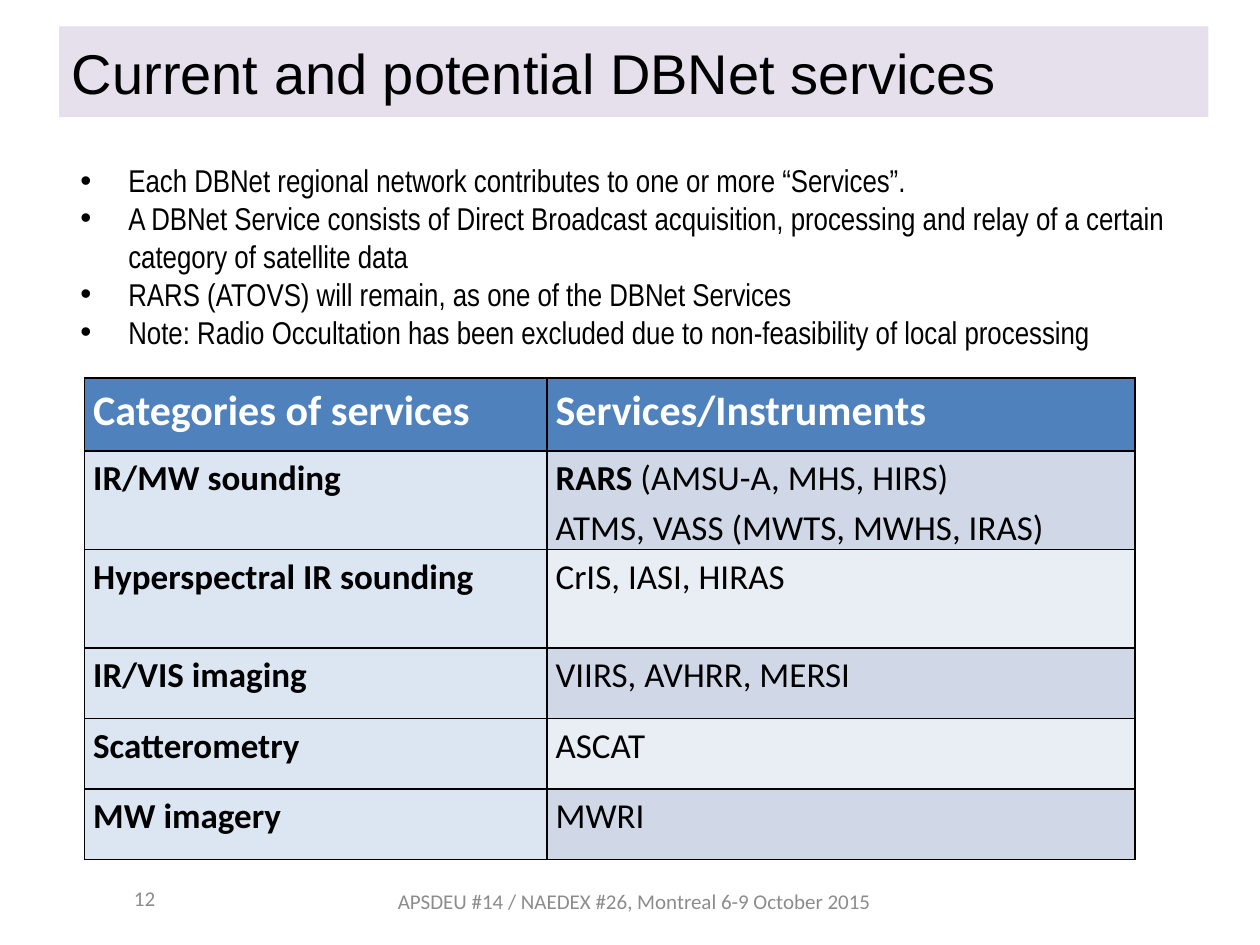
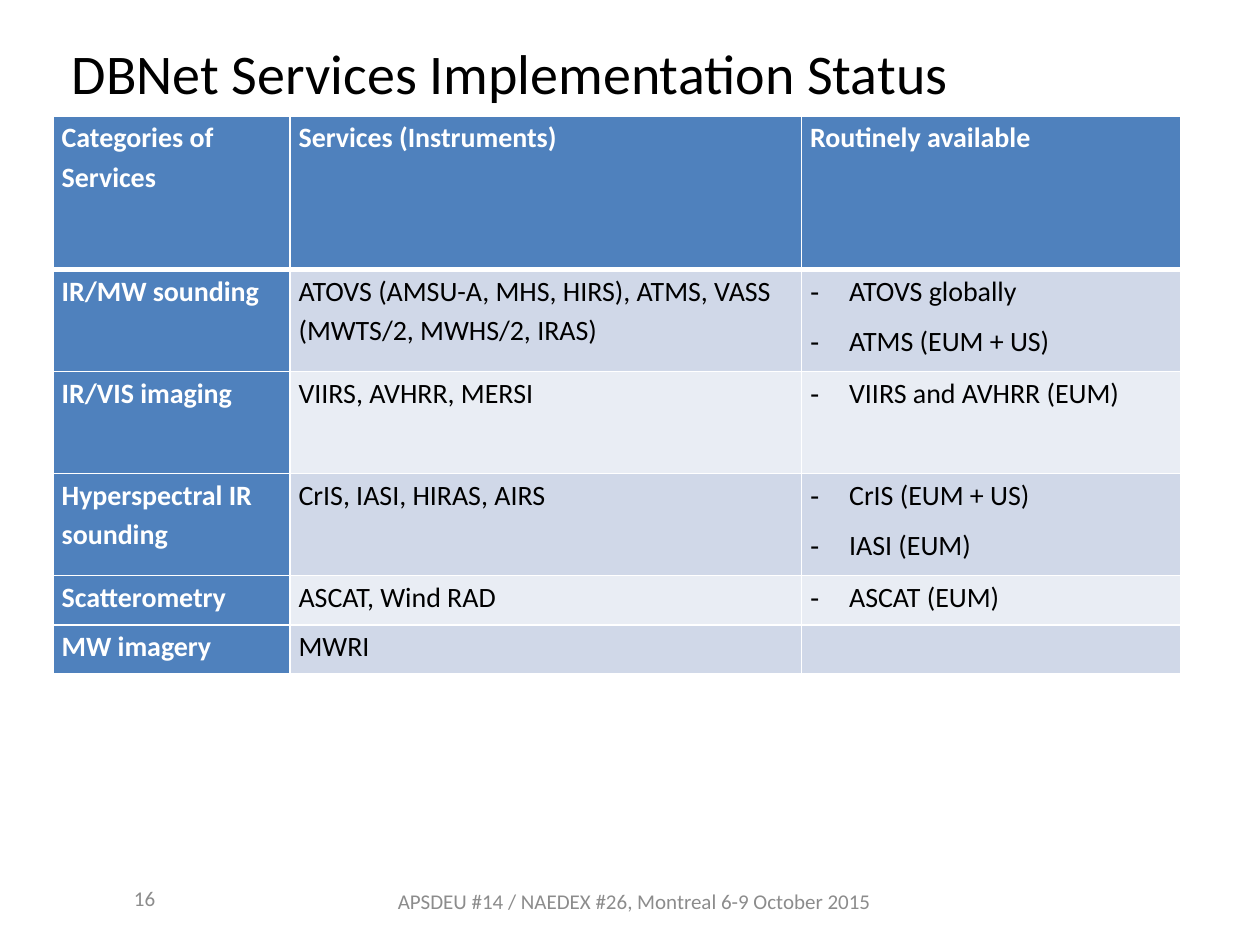
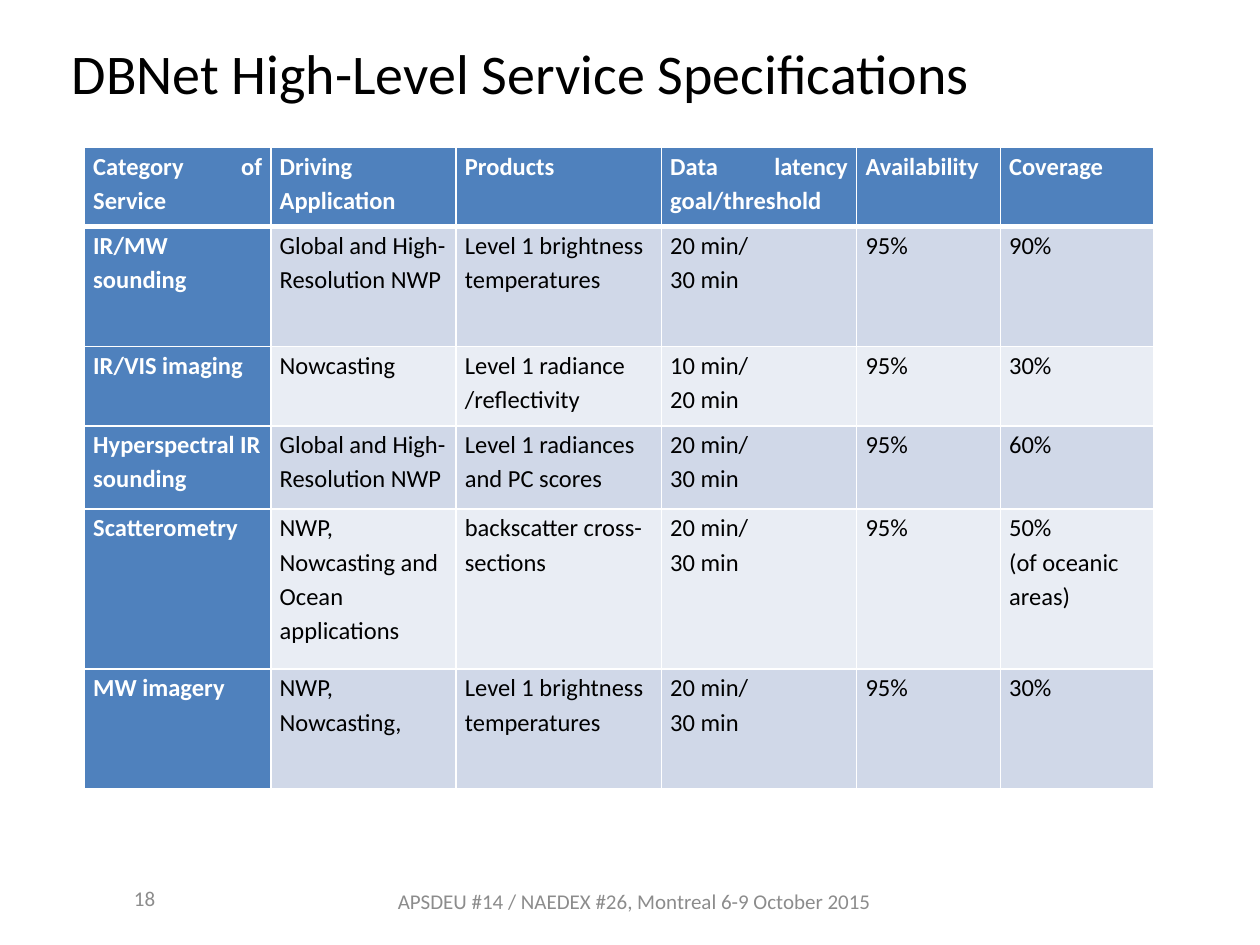
"""Build three slides on DBNet services, their status and their specifications."""
from lxml import etree
from pptx import Presentation
from pptx.dml.color import RGBColor
from pptx.enum.text import MSO_ANCHOR, MSO_AUTO_SIZE, PP_ALIGN
from pptx.oxml.ns import qn
from pptx.util import Inches, Pt

MIDDLE = MSO_ANCHOR.MIDDLE
NO_AUTOFIT = MSO_AUTO_SIZE.NONE
LEFT, CENTER, RIGHT, JUSTIFY = PP_ALIGN.LEFT, PP_ALIGN.CENTER, PP_ALIGN.RIGHT, PP_ALIGN.JUSTIFY

BLACK, WHITE, GREY = "000000", "FFFFFF", "8C8C8C"
BLUE, PALE_BLUE, LILAC = "4F81BD", "DCE6F2", "E6E0EC"
BANDS = ["E9EDF4", "D0D8E8"]
FOOTER = "APSDEU #14 / NAEDEX #26, Montreal 6-9 October 2015"
FRAME_FORMAT = {"word_wrap": True, "auto_size": NO_AUTOFIT, "vertical_anchor": MIDDLE}
CELL_MARGINS = {"margin_left": Inches(0.07), "margin_right": Inches(0.07),
                "margin_top": 0, "margin_bottom": 0}

BULLETS = [
    "Each DBNet regional network contributes to one or more “Services”.",
    "A DBNet Service consists of Direct Broadcast acquisition, processing and relay "
    "of a certain category of satellite data",
    "RARS (ATOVS) will remain, as one of the DBNet Services",
    "Note: Radio Occultation has been excluded due to non-feasibility of local processing",
]

SLIDES = [
    {
        "title": "Current and potential DBNet services", "title_font": "Arial",
        "title_fill": LILAC, "number": "12", "bullets": BULLETS,
        "position": (0.67, 3), "columns": [3.67, 4.67],
        "rows": [0.58, 0.78, 0.78, 0.56, 0.56, 0.56],
        "header_size": 24, "size": 20, "header_align": LEFT, "border": BLACK,
        "header_rule": 1, "category_fill": PALE_BLUE, "category_color": BLACK,
        "cells": [
            ["Categories of services", "Services/Instruments"],
            ["IR/MW sounding", "RARS |(AMSU-A, MHS, HIRS)\nATMS, VASS (MWTS, MWHS, IRAS)"],
            ["Hyperspectral IR sounding", "CrIS, IASI, HIRAS"],
            ["IR/VIS imaging", "VIIRS, AVHRR, MERSI"],
            ["Scatterometry", "ASCAT"],
            ["MW imagery", "MWRI"],
        ],
    },
    {
        "title": "DBNet Services Implementation Status", "title_font": "Calibri",
        "title_fill": None, "number": "16", "bullets": [],
        "position": (0.42, 0.92), "columns": [1.88, 4.06, 3.01],
        "rows": [1.22, 0.81, 0.81, 0.81, 0.39, 0.39],
        "header_size": 16, "size": 16, "header_align": LEFT, "border": WHITE,
        "header_rule": 3, "category_fill": BLUE, "category_color": WHITE,
        "cells": [
            ["Categories of Services", "Services (Instruments)", "Routinely available"],
            ["IR/MW sounding", "ATOVS (AMSU-A, MHS, HIRS), ATMS, VASS (MWTS/2, MWHS/2, IRAS)",
             ["ATOVS globally", "ATMS (EUM + US)"]],
            ["IR/VIS imaging", "VIIRS, AVHRR, MERSI", ["VIIRS and AVHRR (EUM)"]],
            ["Hyperspectral IR sounding", "CrIS, IASI, HIRAS, AIRS",
             ["CrIS (EUM + US)", "IASI (EUM)"]],
            ["Scatterometry", "ASCAT, Wind RAD", ["ASCAT (EUM)"]],
            ["MW imagery", "MWRI", []],
        ],
    },
    {
        "title": "DBNet High-Level Service Specifications", "title_font": "Calibri",
        "title_fill": None, "number": "18", "bullets": [],
        "position": (0.67, 1.17), "columns": [1.48, 1.47, 1.63, 1.55, 1.14, 1.22],
        "rows": [0.63, 0.95, 0.63, 0.66, 1.27, 0.95],
        "header_size": 14, "size": 14, "header_align": JUSTIFY, "border": WHITE,
        "header_rule": 3, "category_fill": BLUE, "category_color": WHITE,
        "cells": [
            ["Category of Service", "Driving Application", "Products",
             "Data latency\ngoal/threshold", "Availability", "Coverage"],
            ["IR/MW sounding", "Global and High-Resolution NWP",
             "Level 1 brightness temperatures", "20 min/\n30 min", "95%", "90%"],
            ["IR/VIS imaging", "Nowcasting",
             "Level 1 radiance /reflectivity", "10 min/\n20 min", "95%", "30%"],
            ["Hyperspectral IR sounding", "Global and High-Resolution NWP",
             "Level 1 radiances and PC scores", "20 min/\n30 min", "95%", "60%"],
            ["Scatterometry", "NWP, Nowcasting and Ocean applications",
             "backscatter cross-sections", "20 min/\n30 min", "95%", "50%\n(of oceanic areas)"],
            ["MW imagery", "NWP, Nowcasting,",
             "Level 1 brightness temperatures", "20 min/\n30 min", "95%", "30%"],
        ],
    },
]


def rgb(value):
    """Turn a hex string into a colour."""
    return RGBColor.from_string(value)


def write(paragraph, text, color, size, name="Calibri", bold=False, align=LEFT,
          bullet=None, indent=0):
    """Fill a paragraph; a bar ends a bold lead and a newline breaks the line."""
    if bullet:
        properties = paragraph._p.get_or_add_pPr()
        properties.set("marL", str(Inches(indent)))
        properties.set("indent", str(-Inches(indent)))
        etree.SubElement(properties, qn("a:buFont")).set("typeface", "Arial")
        etree.SubElement(properties, qn("a:buChar")).set("char", bullet)
    paragraph.alignment = align
    lead, _, rest = text.rpartition("|")
    if lead:
        paragraph.add_run().text = lead
    for line_number, line in enumerate(rest.split("\n")):
        if line_number:
            paragraph.add_line_break()
        paragraph.add_run().text = line
    for line_break in paragraph._p.findall(qn("a:br")):
        etree.SubElement(line_break, qn("a:rPr")).set("sz", str(size * 100))
    for run in paragraph.runs:
        font_format = {"name": name, "size": Pt(size), "bold": bold or run.text == lead}
        for attribute, value in font_format.items():
            setattr(run.font, attribute, value)
        run.font.color.rgb = rgb(color)


presentation = Presentation()
presentation.slide_width, presentation.slide_height = Inches(10), Inches(7.5)

for content in SLIDES:
    slide = presentation.slides.add_slide(presentation.slide_layouts[5])
    title = slide.shapes.title
    title.left, title.top, title.width, title.height = map(Inches, (0.47, 0.21, 9.12, 0.72))
    if content["title_fill"]:
        title.fill.solid()
        title.fill.fore_color.rgb = rgb(content["title_fill"])
    for attribute, value in FRAME_FORMAT.items():
        setattr(title.text_frame, attribute, value)
    write(title.text_frame.paragraphs[0], content["title"], BLACK, 32, content["title_font"])

    rows, columns = content["rows"], content["columns"]
    bounds = map(Inches, (*content["position"], sum(columns), sum(rows)))
    table = slide.shapes.add_table(len(rows), len(columns), *bounds).table
    table.horz_banding = False
    for column, width in zip(table.columns, columns):
        column.width = Inches(width)
    for row, height in zip(table.rows, rows):
        row.height = Inches(height)

    for row_number, row_cells in enumerate(content["cells"]):
        for column_number, entry in enumerate(row_cells):
            cell = table.cell(row_number, column_number)
            for attribute, value in CELL_MARGINS.items():
                setattr(cell, attribute, value)
            fill, color, size, align = BANDS[row_number % 2], BLACK, content["size"], LEFT
            if row_number == 0:
                fill, color = BLUE, WHITE
                size, align = content["header_size"], content["header_align"]
            elif column_number == 0:
                fill, color = content["category_fill"], content["category_color"]
            cell.fill.solid()
            cell.fill.fore_color.rgb = rgb(fill)

            for position, side in enumerate(["lnL", "lnR", "lnT", "lnB"]):
                under_header = (row_number, side) in [(0, "lnB"), (1, "lnT")]
                line = etree.Element(qn(f"a:{side}"))
                line.set("w", str(Pt(content["header_rule"] if under_header else 1)))
                line_fill = etree.SubElement(line, qn("a:solidFill"))
                etree.SubElement(line_fill, qn("a:srgbClr")).set("val", content["border"])
                cell._tc.get_or_add_tcPr().insert(position, line)

            listed = isinstance(entry, list)
            for index, text in enumerate(entry if listed else [entry]):
                frame = cell.text_frame
                paragraph = frame.add_paragraph() if index else frame.paragraphs[0]
                paragraph.line_spacing = 1.15
                if index:
                    paragraph.space_before = Pt(6)
                write(paragraph, text, color, size, align=align,
                      bold=row_number == 0 or column_number == 0,
                      bullet="-" if listed else None, indent=0.31)

    footer_format = {"color": GREY, "size": 12}
    bullet_format = {"color": BLACK, "size": 18, "name": "Arial Narrow",
                     "bullet": "•", "indent": 0.38}
    text_boxes = [
        ((2.95, 6.95, 4.17, 0.4), [FOOTER], {**footer_format, "align": CENTER}),
        ((0.49, 6.93, 0.84, 0.4), [content["number"]], {**footer_format, "align": RIGHT}),
    ]
    if content["bullets"]:
        text_boxes.append(((0.54, 1.22, 9.12, 1.62), content["bullets"], bullet_format))
    for bounds, texts, text_format in text_boxes:
        frame = slide.shapes.add_textbox(*map(Inches, bounds)).text_frame
        for attribute, value in FRAME_FORMAT.items():
            setattr(frame, attribute, value)
        for index, text in enumerate(texts):
            paragraph = frame.add_paragraph() if index else frame.paragraphs[0]
            write(paragraph, text, **text_format)

presentation.save("out.pptx")
